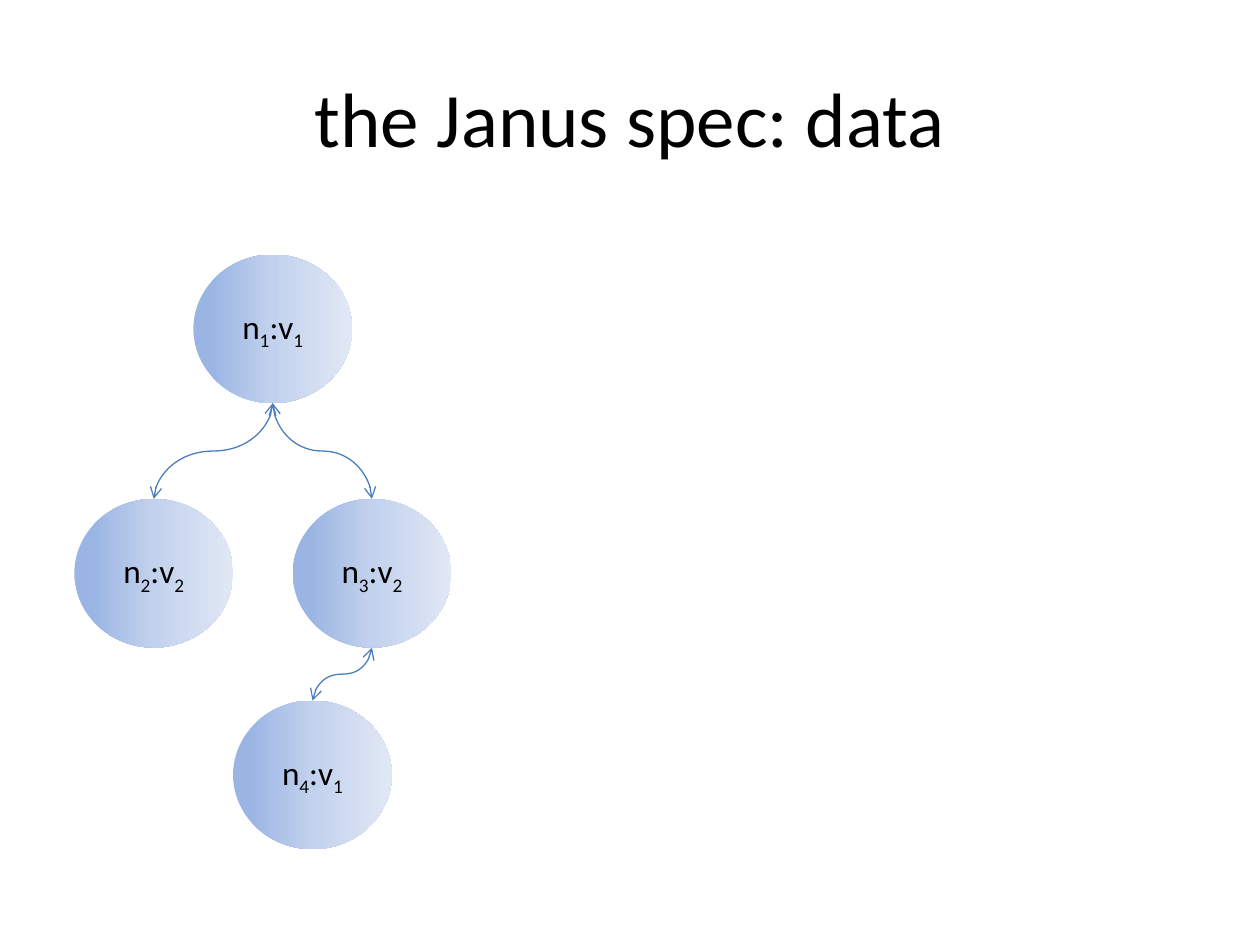
from copy import deepcopy
from dataclasses import dataclass
from itertools import groupby

from pptx import Presentation
from pptx import util as u
from pptx.dml.color import RGBColor
from pptx.enum import shapes, text
from pptx.oxml import ns, xmlchemy as xml


@dataclass(frozen=True)
class Theme:
    font: str = "Calibri"
    ink: str = "000000"
    line: str = "4B7EBC"
    blend: tuple = ((0.1, "9AB5E4"), (0.5, "C2D1ED"), (1, "E1E8F5"))
    title: int = 44
    label: int = 19
    sub: int = -25000
    stroke: float = 0.75


THEME = Theme()
WIDE, HIGH = 10, 7.5

# Tree grid: eight columns make one node's width
NODE_W, NODE_H = 1.26, 1.18
LEFT, COL = 0.59, NODE_W / 8
ROWS = (2.02, 3.96, 5.56)

# Label, column, row
NODES = (("n1:v1", 6, 0), ("n2:v2", 0, 1), ("n3:v2", 11, 1), ("n4:v1", 8, 2))
LINKS = ((0, 2), (0, 1), (2, 3))


def write(shape, words, size=THEME.label, color=THEME.ink):
    """Centre the words in a shape, with digits as subscripts."""
    frame = shape.text_frame
    frame.word_wrap = True
    frame.vertical_anchor = text.MSO_ANCHOR.MIDDLE
    para = frame.paragraphs[0]
    para.alignment = text.PP_ALIGN.CENTER
    for low, chars in groupby(words, str.isdigit):
        run = para.add_run()
        run.text = "".join(chars)
        run.font.name = THEME.font
        run.font.size = u.Pt(size)
        run.font.color.rgb = RGBColor.from_string(color)
        if low:
            run.font._element.set("baseline", str(THEME.sub))


def shade(shape):
    """Fill a shape with the theme's left-to-right blend."""
    shape.fill.gradient()
    shape.fill.gradient_angle = 0
    stops = shape._element.spPr.find(".//" + ns.qn("a:gsLst"))
    stops.append(deepcopy(stops[-1]))
    for stop, (place, color) in zip(shape.fill.gradient_stops, THEME.blend):
        stop.position = place
        stop.color.rgb = RGBColor.from_string(color)


def node(slide, label, col, row):
    oval = slide.shapes.add_shape(
        shapes.MSO_SHAPE.OVAL, u.Inches(LEFT + col * COL),
        u.Inches(ROWS[row]), u.Inches(NODE_W), u.Inches(NODE_H))
    oval.shadow.inherit = False
    oval.line.fill.background()
    shade(oval)
    write(oval, label)
    return oval


def link(slide, top, low):
    """Curve from the foot of one node to the head of a lower one."""
    x1, y1 = top.left + top.width // 2, top.top + top.height
    x2, y2 = low.left + low.width // 2, low.top
    # The curve runs sideways, so lay it flat and give it a quarter turn
    run, rise = y2 - y1, abs(x2 - x1)
    left, head = (x1 + x2 - run) // 2, (y1 + y2 - rise) // 2
    ends = (left, left + run)
    right = x2 > x1
    start, stop = reversed(ends) if right else ends
    curve = slide.shapes.add_connector(
        shapes.MSO_CONNECTOR.CURVE, start, head, stop, head + rise)
    curve.line.color.rgb = RGBColor.from_string(THEME.line)
    curve.line.width = u.Pt(THEME.stroke)
    props = curve._element.spPr
    turn = 270 if right else 90
    props.find(ns.qn("a:xfrm")).set("rot", str(turn * 60000))
    # Arrowheads at both ends, no shadow
    for tag in ("a:headEnd", "a:tailEnd"):
        tip = xml.OxmlElement(tag)
        tip.set("type", "arrow")
        curve.line._get_or_add_ln().append(tip)
    props.append(xml.OxmlElement("a:effectLst"))


def main():
    deck = Presentation()
    deck.slide_width, deck.slide_height = u.Inches(WIDE), u.Inches(HIGH)
    slide = deck.slides.add_slide(deck.slide_layouts[6])

    # Title
    box = slide.shapes.add_textbox(
        u.Inches(WIDE * 0.05), u.Inches(HIGH * 0.04),
        u.Inches(WIDE * 0.9), u.Inches(1.25))
    write(box, "the Janus spec: data", size=THEME.title)

    # Tree
    nodes = [node(slide, *item) for item in NODES]
    for top, low in LINKS:
        link(slide, nodes[top], nodes[low])

    deck.save("out.pptx")


if __name__ == "__main__":
    main()
